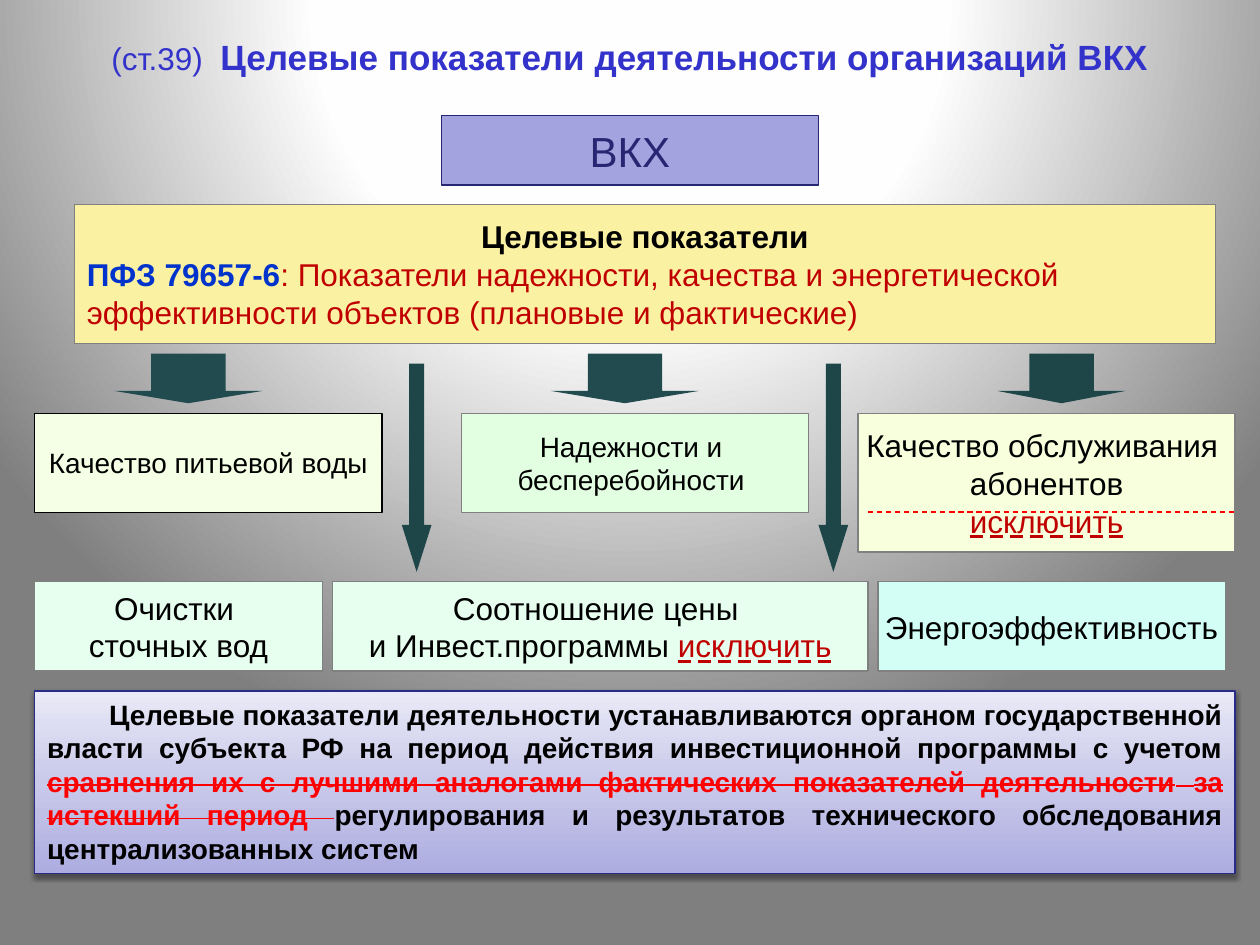
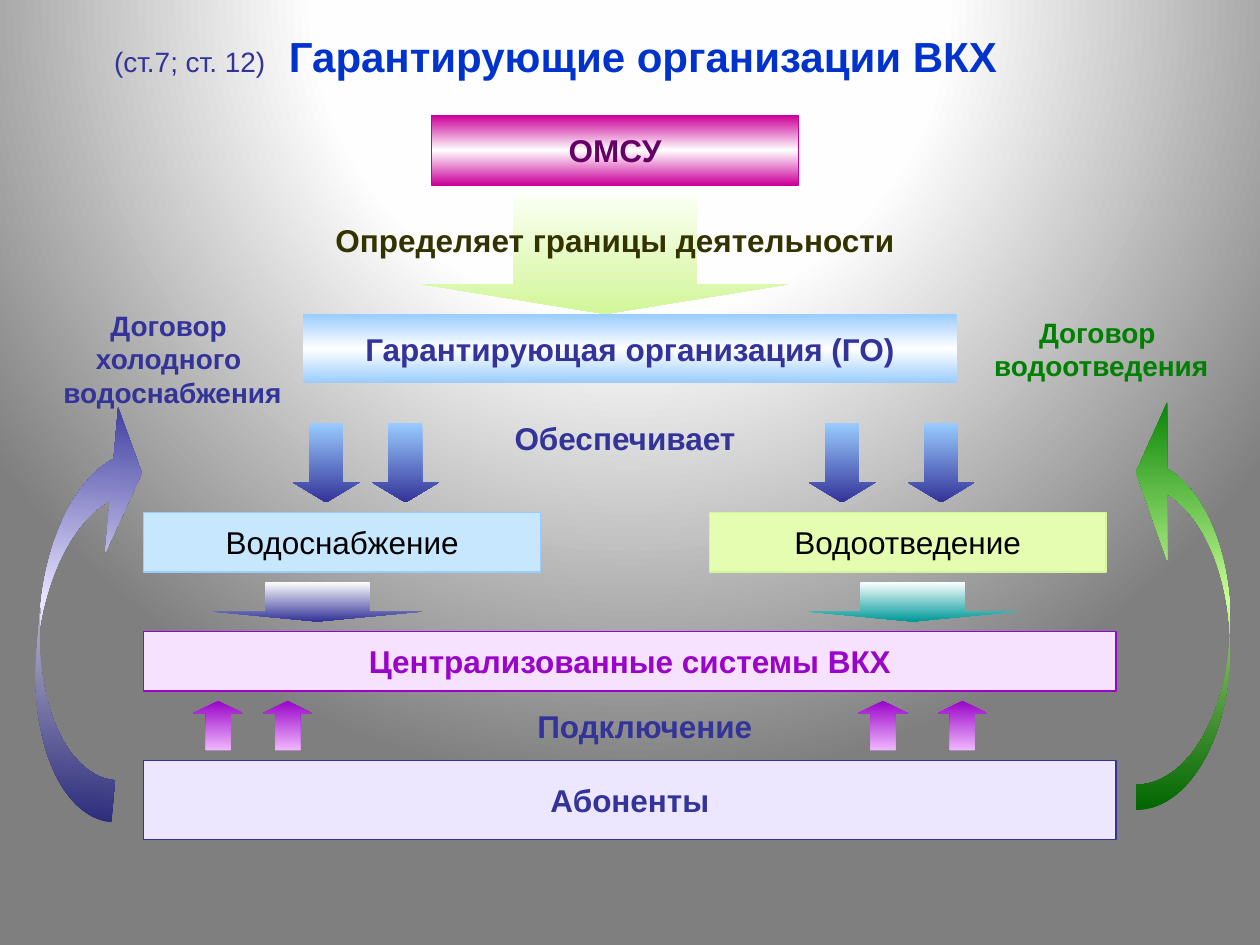
from lxml.etree import SubElement as Sub
from pptx import Presentation
from pptx.dml.color import RGBColor
from pptx.enum.dml import MSO_LINE as Dash
from pptx.enum.shapes import MSO_CONNECTOR as Conn, MSO_SHAPE as Kind
from pptx.enum.text import MSO_ANCHOR as Anchor, MSO_UNDERLINE as Under, PP_ALIGN as Align
from pptx.oxml.ns import qn
from pptx.util import Cm, Pt

INK, RED, BLUE, NAVY = "000000", "C00000", "0033CC", "333399"
GRAY, TEAL, SLATE, MINT = "808080", "1E4649", "224B50", "E7FFEF"
VIOLET, GREEN, SKY, WHITE = "9904C8", "008000", "99CCFF", "FFFFFF"
ALIGNS = {"c": Align.CENTER, "l": Align.LEFT, "j": Align.JUSTIFY}
CUT = {"color": RED, "under": True}


def tint(hex):
    return RGBColor.from_string(hex)


def blend(fill, root, stops):
    fill.gradient()
    grad = root.find(".//" + qn("a:gradFill"))
    for child in list(grad):
        grad.remove(child)
    group = Sub(grad, qn("a:gsLst"))
    for place, color in stops:
        stop = Sub(group, qn("a:gs"), pos=str(place * 1000))
        Sub(stop, qn("a:srgbClr"), val=color)
    return grad


def paint(shape, fill):
    if isinstance(fill, str):
        shape.fill.solid()
        shape.fill.fore_color.rgb = tint(fill)
    else:
        step = 100 // (len(fill) - 1)
        stops = [(i * step, color) for i, color in enumerate(fill)]
        grad = blend(shape.fill, shape.element, stops)
        Sub(grad, qn("a:lin"), ang="5400000", scaled="0")


def style(run, size=18, color=INK, bold=False, font="Arial", under=False, strike=False, gap=0):
    face = run.font
    face.size, face.bold, face.name = Pt(size), bold, font
    face.color.rgb = tint(color)
    if under:
        face.underline = Under.DASH_HEAVY_LINE
    props = run._r.get_or_add_rPr()
    if strike:
        props.set("strike", "sngStrike")
    if gap:
        props.set("spc", str(gap * 100))


def write(shape, *paras, align="c", anchor=Anchor.MIDDLE, wrap=False, indent=0, **look):
    frame = shape.text_frame
    frame.word_wrap, frame.vertical_anchor = wrap, anchor
    for i, para in enumerate(paras):
        line = frame.add_paragraph() if i else frame.paragraphs[0]
        line.alignment = ALIGNS[align[min(i, len(align) - 1)]]
        if indent:
            props = line._p.get_or_add_pPr()
            props.set("marL", "0")
            props.set("indent", str(Cm(indent)))
        for text, extra in [(para, {})] if isinstance(para, str) else para:
            run = line.add_run()
            run.text = text
            style(run, **{**look, **extra})


def form(slide, kind, place, fill, edge=None, adj=(), turn=0):
    shape = slide.shapes.add_shape(kind, *map(Cm, place))
    shape.shadow.inherit = False
    paint(shape, fill)
    if edge:
        shape.line.color.rgb = tint(edge)
        shape.line.width = Pt(0.75)
    else:
        shape.line.fill.background()
    for i, value in enumerate(adj):
        shape.adjustments[i] = value
    shape.rotation = turn
    return shape


def box(slide, place, fill, edge, *paras, **look):
    shape = form(slide, Kind.RECTANGLE, place, fill, edge)
    write(shape, *paras, **look)
    return shape


def label(slide, place, *paras, **look):
    shape = slide.shapes.add_textbox(*map(Cm, place))
    shape.text_frame.margin_left = shape.text_frame.margin_right = 0
    write(shape, *paras, **look)


def arrow(slide, place, fill, head=0.25, kind=Kind.DOWN_ARROW):
    form(slide, kind, place, fill, adj=(0.5, head))


def shade(shape):
    drop = Sub(shape.element.spPr.find(qn("a:effectLst")), qn("a:outerShdw"),
               blurRad=str(Pt(3.1)), dist=str(Pt(1.6)), dir="5400000", rotWithShape="0")
    color = Sub(drop, qn("a:srgbClr"), val=INK)
    Sub(color, qn("a:alpha"), val="38000")


def rule(slide, left, right, top, color):
    line = slide.shapes.add_connector(Conn.STRAIGHT, Cm(left), Cm(top), Cm(right), Cm(top))
    line.line.color.rgb = tint(color)
    line.line.width = Pt(0.75)
    line.line.dash_style = Dash.DASH
    Sub(line.element.spPr, qn("a:effectLst"))


def backdrop(master):
    grad = blend(master.background.fill, master.element,
                 [(0, WHITE), (40, "FEFEFE"), (100, "7F7F7F")])
    track = Sub(grad, qn("a:path"), path="circle")
    Sub(track, qn("a:fillToRect"), l="50000", t="-80000", r="50000", b="180000")


def targets(slide):
    label(slide, (0, 0.33, 25.4, 1.6),
          [("(ст.39)", {"size": 18}), (" ", {"size": 18, "gap": 5}),
           ("Целевые показатели деятельности организаций ВКХ", {"bold": True})],
          size=20, color="3333CC", wrap=True)
    box(slide, (8.9, 2.33, 7.6, 1.4), "A3A3E0", "262673", "ВКХ", size=24, color="262673")
    box(slide, (1.5, 4.12, 23, 2.8), "FBF1A3", GRAY,
        [("Целевые показатели", {"bold": True, "color": INK})],
        [("ПФЗ 79657-6", {"bold": True, "color": BLUE}),
         (": Показатели надежности, качества и энергетической", {})],
        "эффективности объектов (плановые и фактические)",
        color=RED, align="cl", wrap=True)

    top, low = 8.33, 11.73
    box(slide, (0.7, top, 7, 2), "F5FFE5", INK, "Качество питьевой воды", size=16)
    box(slide, (9.3, top, 7, 2), "E3FFE1", GRAY, "Надежности и ", "бесперебойности ", size=16)
    box(slide, (17.3, top, 7.6, 2.8), "F8FFDD", GRAY,
        "Качество обслуживания ", "абонентов", [("исключить", CUT)])
    box(slide, (0.7, low, 5.8, 1.8), MINT, GRAY, "Очистки ", "сточных вод")
    box(slide, (6.7, low, 10.8, 1.8), MINT, GRAY, "Соотношение цены ",
        [("и Инвест.программы ", {}), ("исключить", CUT)])
    box(slide, (17.7, low, 7, 1.8), "D2FEF6", GRAY, "Энергоэффективность")

    for left, width, fill in (2.3, 3, SLATE), (11.1, 3, SLATE), (20.1, 2.6, TEAL):
        arrow(slide, (left, 7.13, width, 1), fill)
    for left in 8.1, 16.5:
        arrow(slide, (left, 7.33, 0.6, 4.2), TEAL, head=1.58)

    gone = {"color": "FF0000", "strike": True}
    note = box(slide, (0.7, 13.93, 24.2, 3.68), "E9E9F7", "2A2A89",
               [("Целевые показатели деятельности устанавливаются органом государственной "
                 "власти субъекта РФ на период действия инвестиционной программы с учетом ", {}),
                ("сравнения их с лучшими аналогами фактических показателей деятельности", gone),
                (" ", {**gone, "font": "DejaVu Sans"}),
                ("за истекший период ", gone),
                ("регулирования и результатов технического обследования "
                 "централизованных систем ", {})],
               size=16, bold=True, align="j", anchor=Anchor.TOP, wrap=True, indent=1.25)
    paint(note, ("E9E9F7", "C9C9EA", "ADADE1"))
    shade(note)
    rule(slide, 17.5, 24.9, 10.32, "FF0000")


def duties(slide):
    label(slide, (1.3, 0.53, 19.8, 1.17),
          [("(ст.7; ст. 12)", {}), (" ", {"gap": 9}),
           ("Гарантирующие организации ВКХ", {"size": 24, "color": BLUE, "bold": True})],
          size=16, color=NAVY, wrap=True)
    pink = "CC0099"
    box(slide, (8.7, 2.33, 7.4, 1.4), (pink, WHITE, pink), pink, "ОМСУ",
        color="660066", bold=True)
    box(slide, (6.1, 6.33, 13.2, 1.4), (SKY, WHITE, SKY), None,
        "Гарантирующая организация (ГО)", color=NAVY, bold=True)
    arrow(slide, (8.5, 3.93, 7.4, 2.4), ("FBFFF3", "D2F698"))
    label(slide, (6.6, 4.53, 11.6, 0.6), "Определяет границы деятельности",
          color="333300", bold=True)

    box(slide, (2.9, 10.33, 8, 1.2), "C6E7FE", SKY, "Водоснабжение")
    box(slide, (14.3, 10.33, 8, 1.2), "E5FDB1", "D2F698", "Водоотведение")
    box(slide, (2.9, 12.73, 19.6, 1.2), "F6E2FE", VIOLET, "Централизованные системы ВКХ",
        color=VIOLET, bold=True)
    box(slide, (2.9, 15.33, 19.6, 1.6), "ECE7FF", NAVY, "Абоненты", color=NAVY, bold=True)

    for left in 5.9, 7.5, 16.3, 18.3:
        arrow(slide, (left, 8.53, 1.35, 1.6), (SKY, NAVY), head=0.3)
    for left, color in (4.3, NAVY), (16.3, "009999"):
        arrow(slide, (left, 11.73, 4.2, 0.8), (WHITE, color))
    for left in 3.9, 5.3, 17.3, 18.9:
        arrow(slide, (left, 14.13, 1, 1), (VIOLET, "F1B7FF"), kind=Kind.UP_ARROW)

    label(slide, (9.3, 8.53, 6.6, 0.6), "Обеспечивает", color=NAVY, bold=True)
    label(slide, (9.7, 14.33, 6.6, 0.6), "Подключение", color=NAVY, bold=True)
    form(slide, Kind.CURVED_LEFT_ARROW, (0.82, 7.98, 1.8, 8.53), (NAVY, "ECE7FF", NAVY),
         adj=(0.47, 1.63, 0.33), turn=185)
    form(slide, Kind.CURVED_RIGHT_ARROW, (22.9, 7.93, 1.9, 8.4), (GREEN, "CCFF99", GREEN),
         adj=(0.27, 1.67, 0.33), turn=180)
    label(slide, (0, 5.93, 6.8, 2.6), "Договор", "холодного", " водоснабжения",
          size=16, color=NAVY, bold=True)
    label(slide, (19.9, 6.13, 4.6, 1.8), "Договор ", "водоотведения",
          size=16, color=GREEN, bold=True)


def main():
    deck = Presentation()
    deck.slide_width, deck.slide_height = Cm(25.4), Cm(19.05)
    backdrop(deck.slide_master)
    for build in targets, duties:
        build(deck.slides.add_slide(deck.slide_layouts[6]))
    deck.save("out.pptx")


if __name__ == "__main__":
    main()
